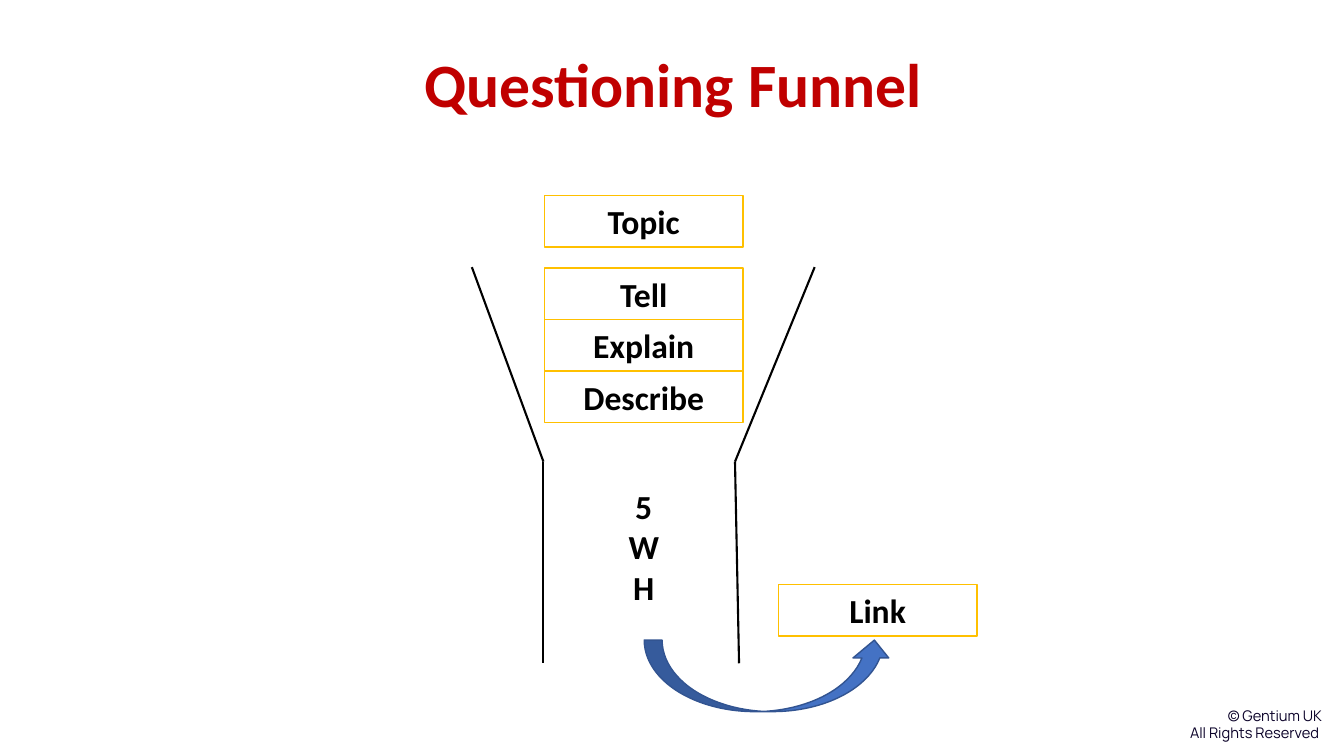
from pptx import Presentation
from pptx.dml.color import RGBColor
from pptx.enum.shapes import MSO_CONNECTOR, MSO_SHAPE as Shape
from pptx.enum.text import PP_ALIGN as Align
from pptx.oxml.ns import qn
from pptx.util import Inches, Pt

HUES = {"red": "C00000", "black": "000000", "white": "FFFFFF", "gold": "FFC000",
        "blue": "4472C4", "edge": "325491", "navy": "0A0128"}

TITLE = ["Questioning Funnel"]
RIGHTS = ["© Gentium UK", "All Rights Reserved "]
STEPS = ["Tell", "Explain", "Describe"]
ASK = ["5WH"]

WIDE, HIGH = 13.33, 7.5
BOX_W, BOX_H = 1.97, 0.51
BOX_X, STEP_Y = 5.4, 2.66
LABELS = [("Topic", BOX_X, 1.94), ("Link", 7.72, 5.8)]
LABELS += [(step, BOX_X, STEP_Y + i * BOX_H) for i, step in enumerate(STEPS)]

# Each wall of the funnel runs from rim to neck to foot.
WALLS = [[(4.68, 2.65), (5.39, 4.58), (5.39, 6.58)],
         [(8.08, 2.65), (7.29, 4.58), (7.33, 6.58)]]


def color(name):
    return RGBColor.from_string(HUES[name])


def write(shape, lines, size=24, hue="black", face="Calibri", bold=True,
          align=Align.CENTER, wrap=True, space=1.0):
    frame = shape.text_frame
    frame.word_wrap = wrap
    form = {"size": Pt(size), "bold": bold, "name": face}
    for i, line in enumerate(lines):
        para = frame.add_paragraph() if i else frame.paragraphs[0]
        para.alignment, para.line_spacing = align, space
        run = para.add_run()
        run.text = line
        for key, value in form.items():
            setattr(run.font, key, value)
        run.font.color.rgb = color(hue)


def main():
    deck = Presentation()
    deck.slide_width, deck.slide_height = Inches(WIDE), Inches(HIGH)
    slide = deck.slides.add_slide(deck.slide_layouts[6])
    shapes = slide.shapes

    def text(at, lines, **form):
        write(shapes.add_textbox(*map(Inches, at)), lines, **form)

    def solid(kind, at, fill, edge):
        shape = shapes.add_shape(kind, *map(Inches, at))
        shape.shadow.inherit = False
        shape.fill.solid()
        shape.fill.fore_color.rgb = color(fill)
        shape.line.color.rgb = color(edge)
        shape.line.width = Pt(1)
        return shape

    text((11.62, 6.96, 1.59, 0.45), RIGHTS, size=10.5, hue="navy", face="Manrope",
         bold=False, align=Align.RIGHT, wrap=False)
    text((2.18, 0.49, 9, 1.87), TITLE, size=44, hue="red", space=0.9)

    for wall in WALLS:
        for start, end in zip(wall, wall[1:]):
            line = shapes.add_connector(MSO_CONNECTOR.STRAIGHT, *map(Inches, start + end))
            line.line.color.rgb = color("black")
            line.line.width = Pt(1.5)
            props = line._element.spPr
            props.append(props.makeelement(qn("a:effectLst"), {}))

    for label, left, top in LABELS:
        box = solid(Shape.RECTANGLE, (left, top, BOX_W, BOX_H), "white", "gold")
        write(box, [label])

    text((6.11, 4.77, 0.55, 1.31), ASK)
    solid(Shape.CURVED_UP_ARROW, (6.39, 6.35, 2.46, 0.71), "blue", "edge")
    deck.save("out.pptx")


if __name__ == "__main__":
    main()
